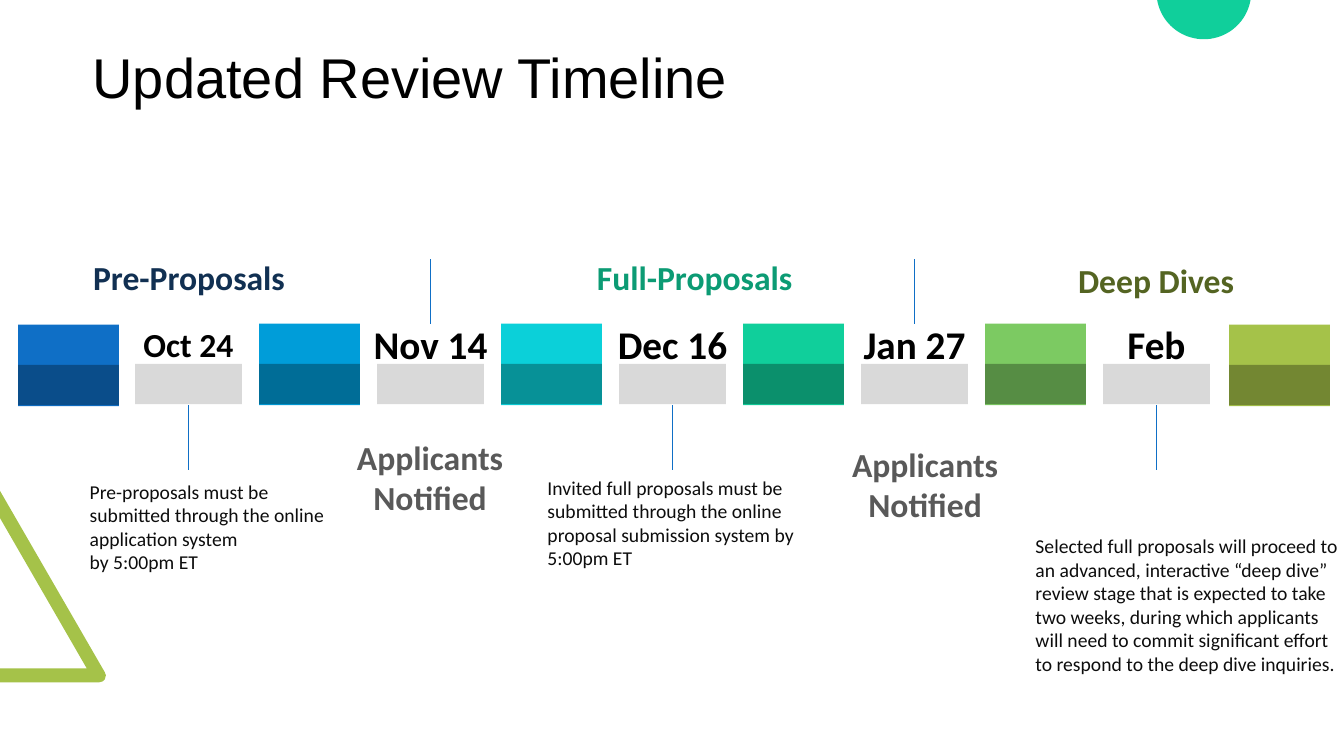
import math

import lxml.etree
import pptx
import pptx.dml.color
import pptx.enum.shapes
import pptx.enum.text
import pptx.oxml.ns
import pptx.util

Inches = pptx.util.Inches
ALIGN = pptx.enum.text.PP_ALIGN
ANCHOR = pptx.enum.text.MSO_ANCHOR
RECTANGLE = pptx.enum.shapes.MSO_SHAPE.RECTANGLE
STRAIGHT = pptx.enum.shapes.MSO_CONNECTOR.STRAIGHT
qn = pptx.oxml.ns.qn


def paint(shape, colour, opacity=100):
    """Fill a shape with a hex colour, without outline or shadow."""
    shape.shadow.inherit = False
    shape.line.fill.background()
    shape.fill.solid()
    shape.fill.fore_color.rgb = pptx.dml.color.RGBColor.from_string(colour)
    if opacity < 100:
        colour_node = shape._element.spPr.find(".//" + qn("a:srgbClr"))
        alpha = lxml.etree.SubElement(colour_node, qn("a:alpha"))
        alpha.set("val", str(opacity * 1000))


def add_text(place, lines, size, colour, bold=False, align=ALIGN.LEFT,
             anchor=ANCHOR.BOTTOM, font="Calibri", inset=0, wrap=True, spacing=1.0):
    box = page.shapes.add_textbox(*map(Inches, place))
    frame = box.text_frame
    frame.word_wrap = wrap
    frame.vertical_anchor = anchor
    frame.margin_left = frame.margin_right = Inches(inset)
    for number, line in enumerate(lines):
        para = frame.add_paragraph() if number else frame.paragraphs[0]
        para.alignment = align
        para.line_spacing = spacing
        span = para.add_run()
        span.text = line
        span.font.name = font
        span.font.size = pptx.util.Pt(size)
        span.font.bold = bold
        span.font.color.rgb = pptx.dml.color.RGBColor.from_string(colour)


deck = pptx.Presentation()
deck.slide_width = Inches(13.33)
deck.slide_height = Inches(7.5)
page = deck.slides.add_slide(deck.slide_layouts[6])

# Corner decorations: triangle frame and the lower part of a disc
triangle = [(0, 6.77), (0, 6.63), (0.86, 6.63), (0, 5.14), (0, 4.87), (1.04, 6.67),
            (1.05, 6.7), (1.04, 6.74), (1.02, 6.76), (0.98, 6.77)]
angles = [math.radians(10 + 4 * step) for step in range(41)]
disc = [(11.94 + 0.47 * math.cos(angle), -0.08 + 0.47 * math.sin(angle)) for angle in angles]
for outline, colour in ((triangle, "A5C249"), (disc, "10CF9B")):
    points = [(Inches(x), Inches(max(y, 0))) for x, y in outline]
    builder = page.shapes.build_freeform(*points[0])
    builder.add_line_segments(points[1:], close=True)
    paint(builder.convert_to_shape(), colour)

add_text((0.82, 0.07, 11.5, 1.45), ["Updated Review Timeline"], 40, "000000",
         anchor=ANCHOR.MIDDLE, font="Arial", inset=0.1, spacing=0.9)

# Timeline tiles, each with a shaded lower half
PITCH = 2.4
date_tiles = [(1.34 + PITCH * step, 3.21, 1.06, "FFFFFF", 15) for step in range(5)]
phase_tiles = [
    (0.18, 3.22, 1, "0F6FC6", 30),
    (2.57, 3.21, 1, "009DD9", 30),
    (4.97, 3.21, 1, "0BD0D9", 30),
    (7.37, 3.21, 1, "10CF9B", 30),
    (9.77, 3.21, 1, "7CCA62", 30),
    (12.19, 3.22, 1, "A5C249", 30),
]
for left, top, width, colour, shade in date_tiles + phase_tiles:
    tile = page.shapes.add_shape(RECTANGLE, Inches(left), Inches(top), Inches(width), Inches(0.81))
    paint(tile, colour)
    lower_half = page.shapes.add_shape(
        RECTANGLE, Inches(left), Inches(top + 0.4), Inches(width), Inches(0.4))
    paint(lower_half, "000000", shade)

# Dates, with markers alternating below and above the tiles
dates = [("Oct 24", 24), ("Nov 14", 28), ("Dec 16", 28), ("Jan 27", 28), ("Feb", 28)]
for step, (date, size) in enumerate(dates):
    centre = 1.87 + PITCH * step
    add_text((centre - 0.8, 3.13, 1.6, 0.57), [date], size, "000000", bold=True,
             align=ALIGN.CENTER, anchor=ANCHOR.MIDDLE, inset=0.1, wrap=False)
    start, end = (3.21, 2.57) if step % 2 else (4.02, 4.66)
    marker = page.shapes.add_connector(
        STRAIGHT, Inches(centre), Inches(start), Inches(centre), Inches(end))
    marker.line.width = pptx.util.Pt(0.5)
    marker.line.color.rgb = pptx.dml.color.RGBColor.from_string("0F6FC6")
    lxml.etree.SubElement(marker._element.spPr, qn("a:effectLst"))

headings = [
    ((0.75, 2.5, 2.25, 0.5), "Pre-Proposals", "113052"),
    ((3.14, 4.27, 2.25, 0.91), "Applicants Notified", "595959"),
    ((5.67, 2.5, 2.44, 0.5), "Full-Proposals", "0C9B74"),
    ((8.05, 4.34, 2.25, 0.91), "Applicants Notified", "595959"),
    ((10.34, 2.53, 2.25, 0.5), "Deep Dives", "546422"),
]
for place, heading, colour in headings:
    add_text(place, [heading], 24, colour, bold=True, align=ALIGN.CENTER)

details = [
    ((0.89, 4.7, 2.53, 1.04),
     ["Pre-proposals must be submitted through the online application system",
      "by 5:00pm ET"]),
    ((5.43, 4.66, 2.65, 1.04),
     ["Invited full proposals must be submitted through the online proposal "
      "submission system by 5:00pm ET"]),
    ((10.27, 4.76, 3.01, 1.99),
     ["Selected full proposals will proceed to an advanced, interactive “deep dive” "
      "review stage that is expected to take two weeks, during which applicants will "
      "need to commit significant effort to respond to the deep dive inquiries."]),
]
for place, lines in details:
    add_text(place, lines, 14, "0D0D0D")

deck.save("out.pptx")
